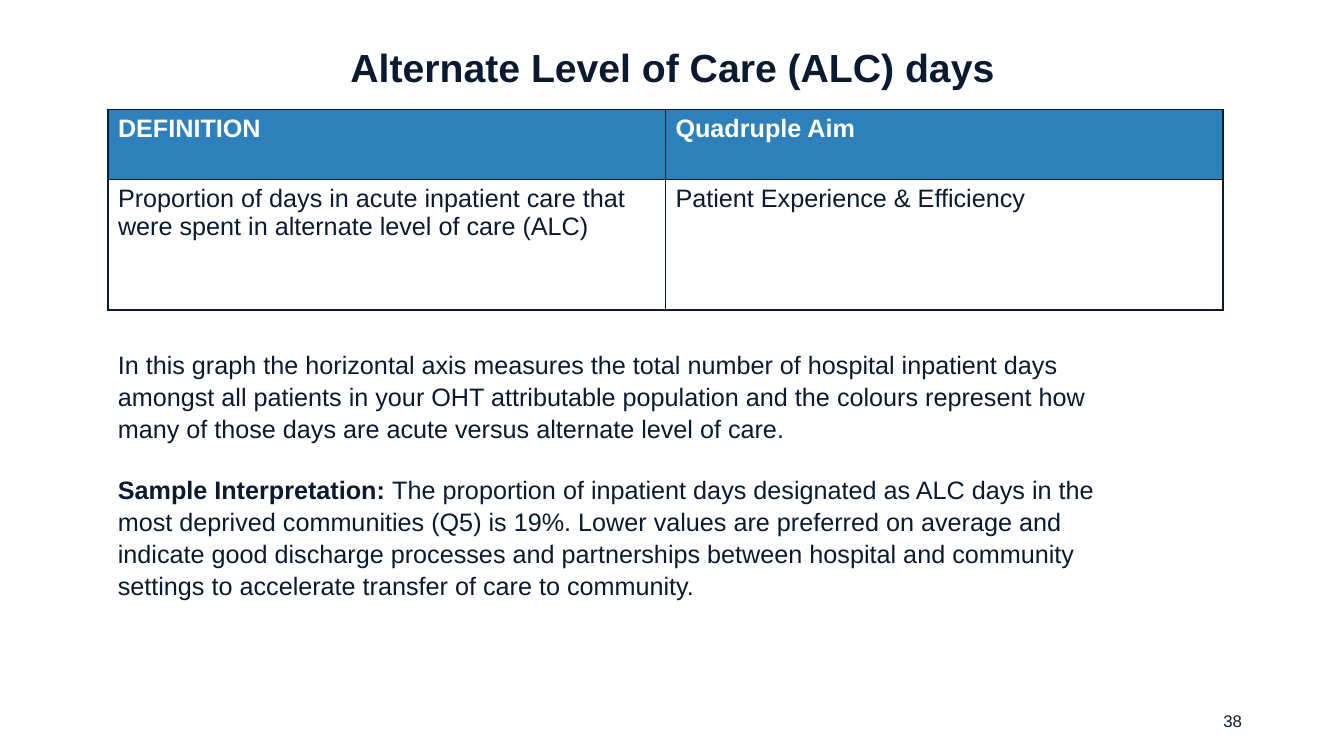
from dataclasses import dataclass

import pptx
import pptx.dml.color
import pptx.enum.text
import pptx.oxml
import pptx.oxml.ns
import pptx.util

Cm = pptx.util.Cm
Align = pptx.enum.text.PP_ALIGN
Anchor = pptx.enum.text.MSO_ANCHOR


@dataclass(frozen=True)
class Theme:
    font: str = "Arial"
    ink: str = "0A1A31"
    header_fill: str = "2E80BD"
    white: str = "FFFFFF"
    title_size: int = 28
    body_size: int = 18
    number_size: int = 12
    border_width: int = 1


THEME = Theme()


def rgb(value):
    return pptx.dml.color.RGBColor.from_string(value)


def add_span(para, text, size=THEME.body_size, color=THEME.ink, bold=False):
    span = para.add_run()
    span.text = text
    span.font.name = THEME.font
    span.font.size = pptx.util.Pt(size)
    span.font.bold = bold
    span.font.color.rgb = rgb(color)


def add_box(page, left, top, width, height, anchor=Anchor.TOP):
    box = page.shapes.add_textbox(Cm(left), Cm(top), Cm(width), Cm(height))
    box.text_frame.word_wrap = True
    box.text_frame.vertical_anchor = anchor
    return box.text_frame


def add_line(page, place, text, size, align, bold=False):
    """Add a text box with one vertically centred line."""
    para = add_box(page, *place, anchor=Anchor.MIDDLE).paragraphs[0]
    para.alignment = align
    add_span(para, text, size, bold=bold)


def set_borders(cell):
    properties = cell._tc.get_or_add_tcPr()
    width = pptx.util.Pt(THEME.border_width)
    # Borders come before the fill in the cell properties
    for index, side in enumerate(("lnL", "lnR", "lnT", "lnB")):
        line = pptx.oxml.parse_xml(
            f'<a:{side} {pptx.oxml.ns.nsdecls("a")} w="{width}"><a:solidFill>'
            f'<a:srgbClr val="{THEME.ink}"/></a:solidFill></a:{side}>')
        properties.insert(index, line)


def add_definition_table(page, rows, place, row_heights):
    frame = page.shapes.add_table(len(rows), len(rows[0]), *map(Cm, place))
    table = frame.table
    for row_index, texts in enumerate(rows):
        is_header = row_index == 0
        table.rows[row_index].height = Cm(row_heights[row_index])
        for column_index, text in enumerate(texts):
            cell = table.cell(row_index, column_index)
            cell.fill.solid()
            cell.fill.fore_color.rgb = rgb(
                THEME.header_fill if is_header else THEME.white)
            set_borders(cell)
            add_span(cell.text_frame.paragraphs[0], text,
                     color=THEME.white if is_header else THEME.ink,
                     bold=is_header)


def add_explanation(page, place, paragraphs):
    frame = add_box(page, *place)
    for index, spans in enumerate(paragraphs):
        para = frame.paragraphs[0] if index == 0 else frame.add_paragraph()
        para.line_spacing = 1.05
        if index:
            para.space_before = pptx.util.Pt(21.6)
        for text, bold in spans:
            add_span(para, text, bold=bold)


def main():
    deck = pptx.Presentation()
    deck.slide_width, deck.slide_height = Cm(33.87), Cm(19.05)
    page = deck.slides.add_slide(deck.slide_layouts[6])

    # Title and page number
    add_line(page, (1.96, 0.61, 29.97, 2.13),
             "Alternate Level of Care (ALC) days",
             THEME.title_size, Align.CENTER, bold=True)
    add_line(page, (23.93, 17.65, 7.62, 1.02), "38",
             THEME.number_size, Align.RIGHT)

    # Definition table
    add_definition_table(page, [
        ("DEFINITION", "Quadruple Aim"),
        ("Proportion of days in acute inpatient care that were spent in "
         "alternate level of care (ALC)",
         "Patient Experience & Efficiency"),
    ], (2.72, 2.75, 28.1, 5.06), (1.78, 3.28))

    # Explanation and sample reading
    add_explanation(page, (2.72, 8.64, 26.21, 6.4), [
        [("In this graph the horizontal axis measures the total number of "
          "hospital inpatient days amongst all patients in your OHT "
          "attributable population and the colours represent how many of "
          "those days are acute versus alternate level of care.", False)],
        [("Sample Interpretation: ", True),
         ("The proportion of inpatient days designated as ALC days in the "
          "most deprived communities (Q5) is 19%. Lower values are preferred "
          "on average and indicate good discharge processes and partnerships "
          "between hospital and community settings to accelerate transfer of "
          "care to community.", False)],
    ])

    deck.save("out.pptx")


if __name__ == "__main__":
    main()
